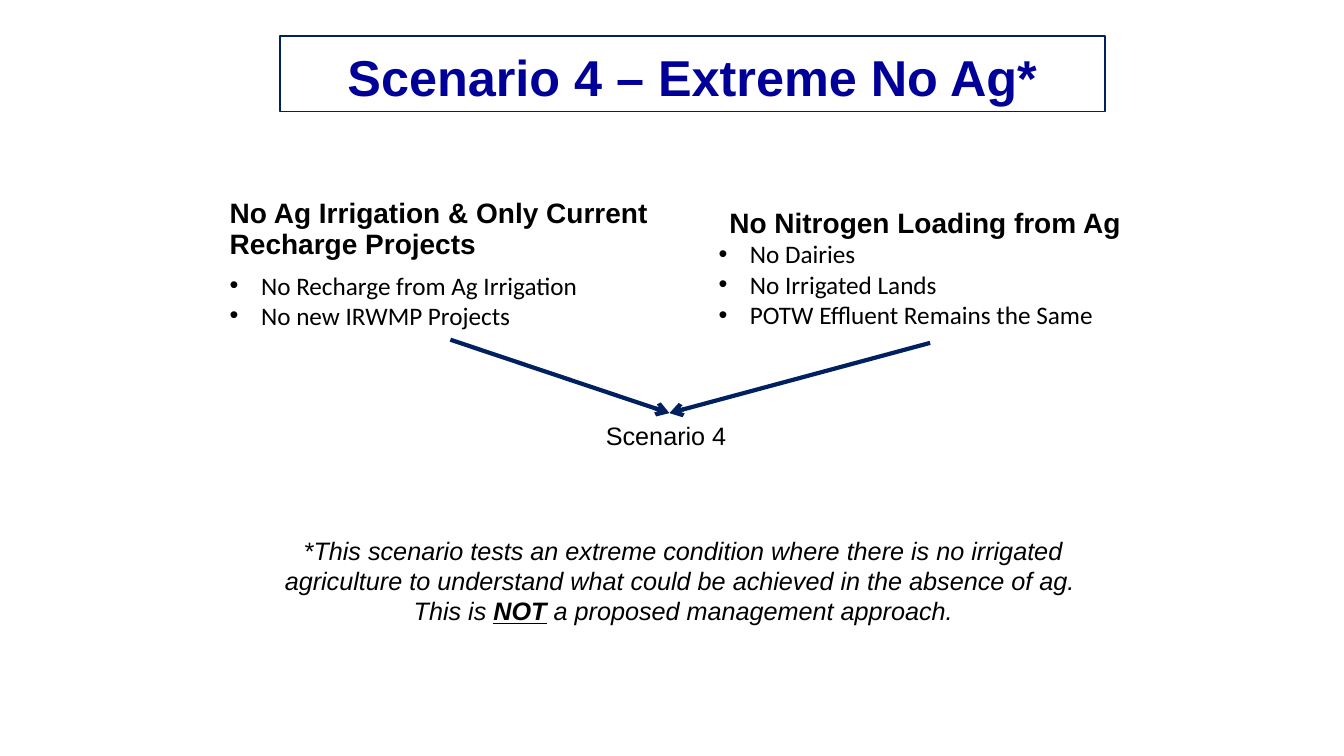
from dataclasses import dataclass

from lxml import etree
from pptx import Presentation
from pptx.dml.color import RGBColor
from pptx.enum.shapes import MSO_CONNECTOR, MSO_SHAPE
from pptx.enum.text import MSO_ANCHOR, PP_ALIGN
from pptx.oxml.ns import qn
from pptx.util import Cm, Pt

LEFT, CENTER = PP_ALIGN.LEFT, PP_ALIGN.CENTER
TOP, MIDDLE, BOTTOM = MSO_ANCHOR.TOP, MSO_ANCHOR.MIDDLE, MSO_ANCHOR.BOTTOM
STRAIGHT, RECT = MSO_CONNECTOR.STRAIGHT, MSO_SHAPE.RECTANGLE

# Boxes are left, top, width, height in centimetres.
TITLE = ("Scenario 4 – Extreme No Ag*", (7.06, 0.91, 20.78, 1.9))
CAUSES = [
    dict(head="No Ag Irrigation & Only Current Recharge Projects",
         items=["No Recharge from Ag Irrigation", "No new IRWMP Projects"],
         box=(5.61, 4.85, 11.25, 3.7),
         style=dict(align=LEFT, spacing=0.9, after=7),
         start=(11.35, 8.56)),
    dict(head="No Nitrogen Loading from Ag",
         items=["No Dairies", "No Irrigated Lands",
                "POTW Effluent Remains the Same"],
         box=(17.93, 4.99, 10.77, 3.7),
         style=dict(align=CENTER),
         start=(23.44, 8.64)),
]
RESULT = ("Scenario 4 ", (15.06, 10.49, 3.63, 1.04))
MEET = (16.87, 10.41)
NOTE = [
    ["*This scenario tests an extreme condition where there is no irrigated"],
    ["agriculture to understand what could be achieved in the absence of ag. "],
    ["This is ", ("NOT", dict(bold=True, underline=True)),
     " a proposed management approach."],
]
NOTE_BOX = (6.83, 13.36, 20.78, 2.57)


@dataclass(frozen=True)
class Theme:
    ink: str = "000000"
    title: str = "000099"
    line: str = "002060"
    sans: str = "Arial"
    list: str = "Calibri"
    big: int = 36
    head: int = 20
    body: int = 18
    inset: float = 0.18
    indent: float = 0.79


theme = Theme()


def lengths(values):
    return [Cm(v) for v in values]


def write(frame, text, first=False, size=theme.body, font=theme.sans,
          color=theme.ink, bold=False, italic=False, align=LEFT,
          spacing=None, after=None, bullet=False):
    """Write one paragraph; text is a string or a list of runs."""
    para = frame.paragraphs[0] if first else frame.add_paragraph()
    if bullet:
        props = para._p.get_or_add_pPr()
        step = Cm(theme.indent)
        props.set("marL", str(step))
        props.set("indent", str(-step))
        etree.SubElement(props, qn("a:buFont")).set("typeface", "Arial")
        etree.SubElement(props, qn("a:buChar")).set("char", "•")
    para.alignment = align
    if spacing:
        para.line_spacing = spacing
    if after:
        para.space_after = Pt(after)
    for part in [text] if isinstance(text, str) else text:
        words, extra = (part, {}) if isinstance(part, str) else part
        run = para.add_run()
        run.text = words
        run.font.name, run.font.size = font, Pt(size)
        run.font.bold = extra.get("bold", bold)
        run.font.italic = italic
        run.font.underline = extra.get("underline")
        run.font.color.rgb = RGBColor.from_string(color)


def add_box(slide, box, anchor=TOP, inset=None, wrap=True):
    frame = slide.shapes.add_textbox(*lengths(box)).text_frame
    frame.word_wrap = wrap
    frame.vertical_anchor = anchor
    if inset is not None:
        frame.margin_left = frame.margin_right = Cm(inset)
        frame.margin_top = frame.margin_bottom = Cm(inset)
    return frame


def add_title(slide):
    text, box = TITLE
    shape = slide.shapes.add_shape(RECT, *lengths(box))
    shape.shadow.inherit = False
    shape.fill.background()
    shape.line.color.rgb = RGBColor.from_string(theme.line)
    shape.line.width = Pt(1.25)
    shape.text_frame.vertical_anchor = BOTTOM
    write(shape.text_frame, text, first=True, size=theme.big,
          color=theme.title, bold=True, align=CENTER)


def add_arrow(slide, start, end):
    arrow = slide.shapes.add_connector(STRAIGHT, *lengths(start + end))
    arrow.line.color.rgb = RGBColor.from_string(theme.line)
    arrow.line.width = Pt(3)
    line = arrow.line._get_or_add_ln()
    etree.SubElement(line, qn("a:tailEnd")).set("type", "arrow")
    etree.SubElement(arrow._element.spPr, qn("a:effectLst"))


def add_cause(slide, cause):
    frame = add_box(slide, cause["box"], inset=theme.inset)
    write(frame, cause["head"], first=True, size=theme.head, bold=True,
          **cause["style"])
    for item in cause["items"]:
        write(frame, item, font=theme.list, bullet=True)
    add_arrow(slide, cause["start"], MEET)


def main():
    deck = Presentation()
    deck.slide_width, deck.slide_height = Cm(33.87), Cm(19.05)
    slide = deck.slides.add_slide(deck.slide_layouts[6])
    add_title(slide)
    for cause in CAUSES:
        add_cause(slide, cause)
    text, box = RESULT
    frame = add_box(slide, box, anchor=MIDDLE, inset=theme.inset)
    write(frame, text, first=True, align=CENTER, spacing=0.9)
    frame = add_box(slide, NOTE_BOX, wrap=False)
    for i, text in enumerate(NOTE):
        write(frame, text, first=i == 0, italic=True, align=CENTER)
    deck.save("out.pptx")


if __name__ == "__main__":
    main()
